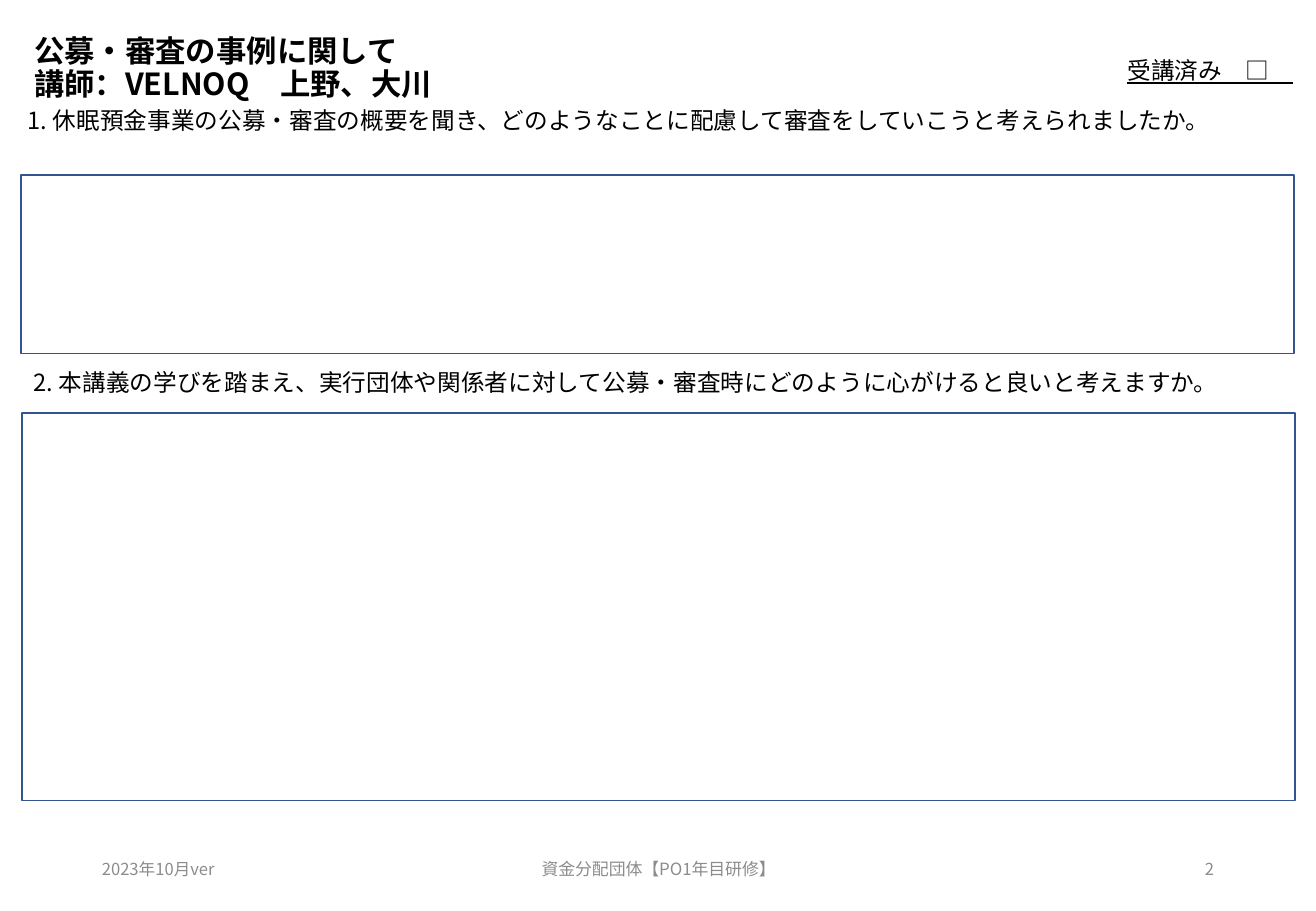
from lxml import etree
from pptx import Presentation
from pptx.dml.color import RGBColor
from pptx.enum.shapes import MSO_SHAPE
from pptx.enum.text import MSO_ANCHOR, MSO_AUTO_SIZE, PP_ALIGN
from pptx.oxml.ns import qn
from pptx.util import Pt

PX = 9144  # 100 px to the inch
FONT = "Noto Sans CJK JP"
BLACK, GREY, WHITE, BLUE = "000000", "8C8C8C", "FFFFFF", "325491"
LEFT, CENTER, RIGHT = PP_ALIGN.LEFT, PP_ALIGN.CENTER, PP_ALIGN.RIGHT
TOP, MIDDLE = MSO_ANCHOR.TOP, MSO_ANCHOR.MIDDLE
RECTANGLE = MSO_SHAPE.RECTANGLE


def rgb(value):
    return RGBColor.from_string(value)


def write(sp, text, size, color=BLACK, align=LEFT, anchor=TOP):
    """Fill a shape with one styled paragraph and return the paragraph."""
    tf = sp.text_frame
    tf.word_wrap = True
    tf.auto_size = MSO_AUTO_SIZE.NONE
    tf.vertical_anchor = anchor
    p = tf.paragraphs[0]
    p.text = text
    p.alignment = align
    p.font.size = Pt(size)
    p.font.name = FONT
    p.font.color.rgb = rgb(color)
    east_asian = etree.Element(qn("a:ea"), typeface=FONT)
    p._p.pPr.find(qn("a:defRPr")).find(qn("a:latin")).addnext(east_asian)
    return p


prs = Presentation()
prs.slide_width, prs.slide_height = 1083 * PX, 750 * PX
slide = prs.slides.add_slide(prs.slide_layouts[5])
shapes = slide.shapes

# Title
title = shapes.title
title.left, title.top, title.width, title.height = 18 * PX, 14 * PX, 934 * PX, 86 * PX
p = write(title, "公募・審査の事例に関して\n講師：VELNOQ　上野、大川", 18, anchor=MIDDLE)
p.font.bold = True
p.line_spacing = 0.9

# Answer boxes
for left, top, height in [(17, 144, 147), (18, 340, 319)]:
    sp = shapes.add_shape(RECTANGLE, left * PX, top * PX, 1048 * PX, height * PX)
    sp.shadow.inherit = False
    sp.fill.solid()
    sp.fill.fore_color.rgb = rgb(WHITE)
    sp.line.color.rgb = rgb(BLUE)
    sp.line.width = Pt(1)

# Questions
questions = [
    (13, 82, 1039, "1. 休眠預金事業の公募・審査の概要を聞き、どのようなことに配慮して審査をしていこうと考えられましたか。"),
    (18, 298, 1048, "2. 本講義の学びを踏まえ、実行団体や関係者に対して公募・審査時にどのように心がけると良いと考えますか。"),
]
for left, top, width, text in questions:
    sp = shapes.add_textbox(left * PX, top * PX, width * PX, 34 * PX)
    write(sp, text, 14)

# Attendance check
sp = shapes.add_textbox(918 * PX, 41 * PX, 201 * PX, 34 * PX)
write(sp, "受講済み　□　", 14).font.underline = True

# Footer
footers = [
    (74, 244, "2023年10月ver", 9.8, LEFT),
    (359, 366, "資金分配団体【PO1年目研修】", 10, CENTER),
    (765, 244, "2", 9.8, RIGHT),
]
for left, width, text, size, align in footers:
    sp = shapes.add_textbox(left * PX, 695 * PX, width * PX, 40 * PX)
    write(sp, text, size, GREY, align, MIDDLE)

prs.save("out.pptx")
